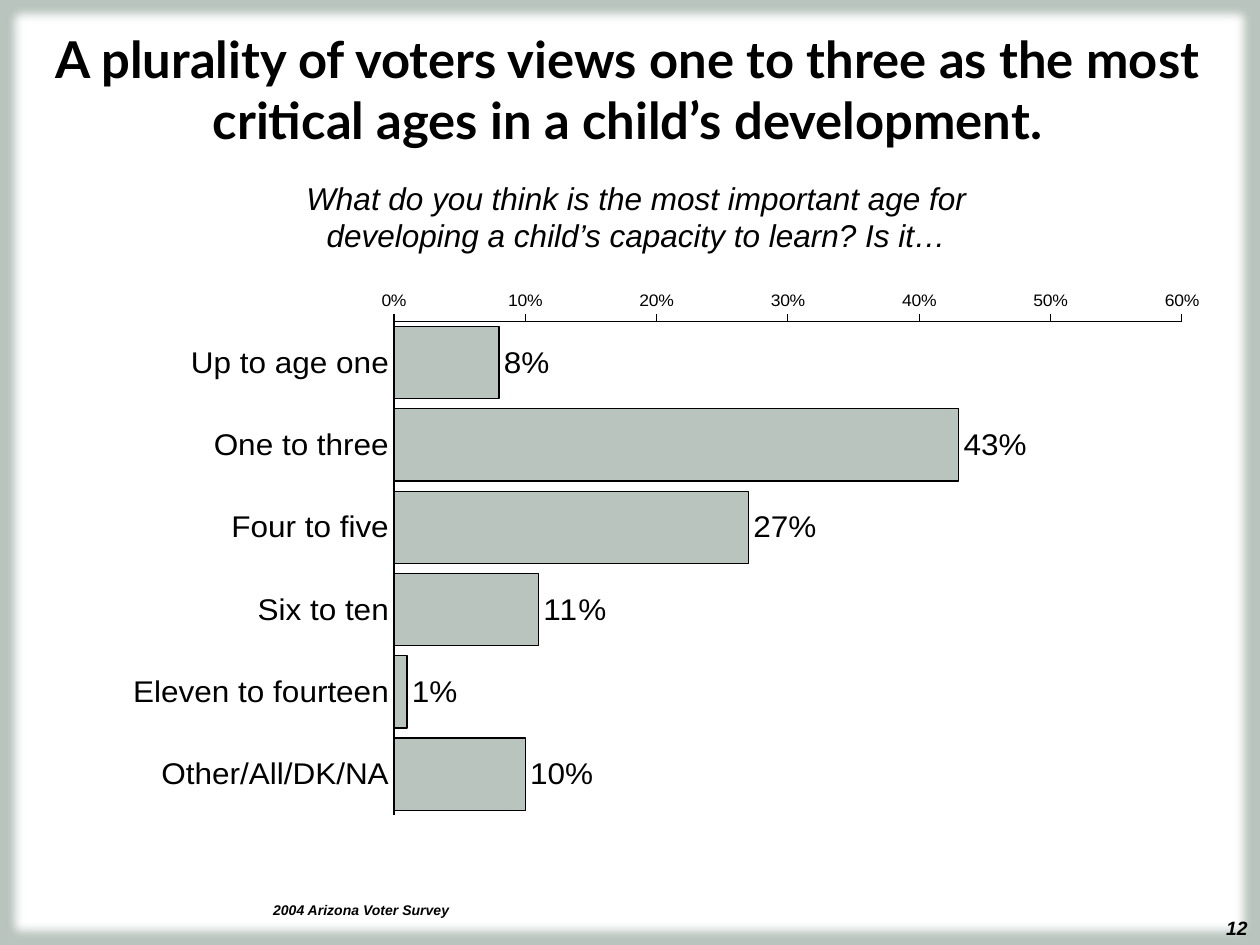
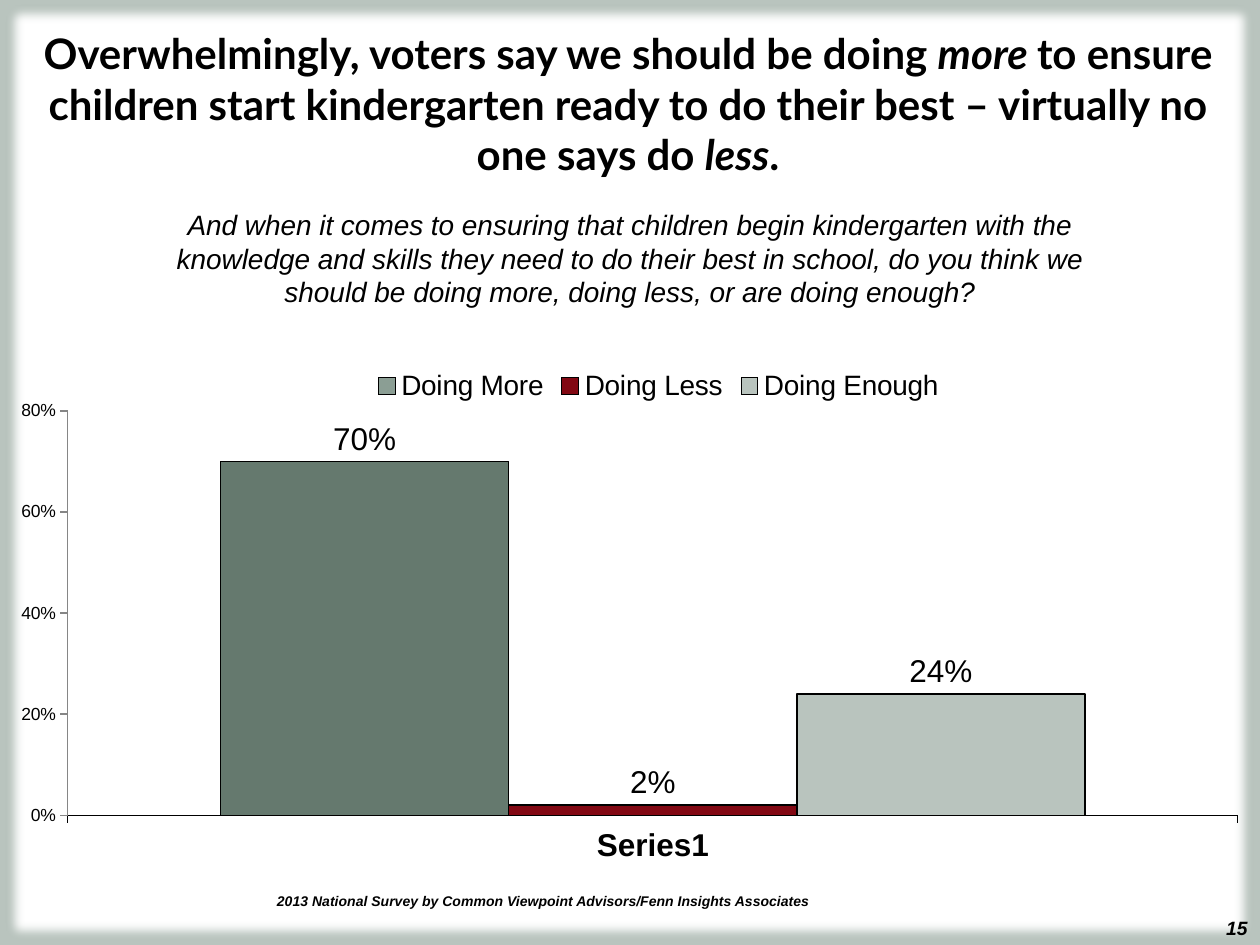
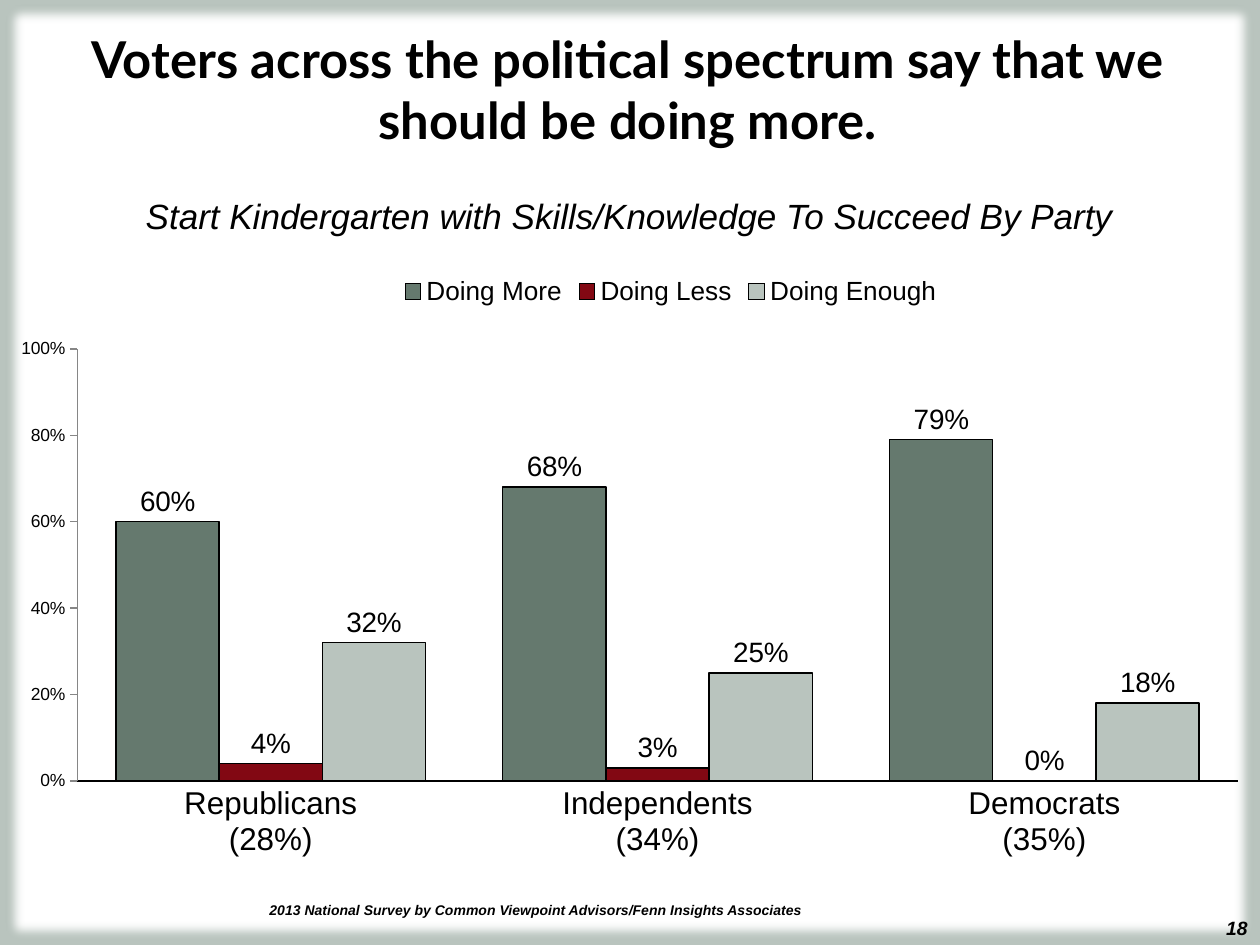
"""Build three voter survey slides, each with one chart."""
import dataclasses

import lxml.etree
import pptx
import pptx.chart.data
import pptx.dml.color
import pptx.enum.chart
import pptx.enum.dml
import pptx.enum.shapes
import pptx.enum.text
import pptx.oxml
import pptx.oxml.ns
import pptx.util

Pt = pptx.util.Pt
Align = pptx.enum.text.PP_ALIGN
Anchor = pptx.enum.text.MSO_ANCHOR
ChartType = pptx.enum.chart.XL_CHART_TYPE
TickMark = pptx.enum.chart.XL_TICK_MARK


@dataclasses.dataclass(frozen=True)
class Theme:
    """Colours, fonts and type sizes shared by the slides."""
    sage: str = "B9C4BE"
    pale_green: str = "8B9E94"
    green: str = "65796E"
    red: str = "820813"
    frame_line: str = "4C5B53"
    axis_grey: str = "868686"
    white: str = "FFFFFF"
    black: str = "000000"
    title_font: str = "Lato"
    body_font: str = "Arial"
    title_size: int = 29
    chart_size: int = 18
    axis_size: int = 10
    number_size: int = 11
    source_size: int = 8


THEME = Theme()
TITLE_BOX = (12.2, 12.2, 693.4, 90)
NUMBER_BOX = (628.6, 519.8, 91.4, 20.2)
FRAME_BOX = (2.9, 2.2, 714.2, 536.4)
NATIONAL_SOURCE = "2013 National Survey by Common Viewpoint Advisors/Fenn Insights Associates"


def color(value):
    """Turn a hexadecimal string into a colour."""
    return pptx.dml.color.RGBColor.from_string(value)


def place(shape, box):
    """Move a shape to a box given in points."""
    shape.left, shape.top, shape.width, shape.height = map(Pt, box)


def format_font(font, size, bold=False, italic=False, name=THEME.body_font):
    """Apply the black text style to a font."""
    font.size, font.bold, font.italic, font.name = Pt(size), bold, italic, name
    font.color.rgb = color(THEME.black)


def write_text(shape, runs, size, bold=False, italic=False, name=THEME.body_font,
               align=Align.CENTER, anchor=Anchor.TOP):
    """Write a string, or (text, italic) runs, as one paragraph."""
    frame = shape.text_frame
    frame.word_wrap = True
    frame.auto_size = pptx.enum.text.MSO_AUTO_SIZE.NONE
    frame.vertical_anchor = anchor
    paragraph = frame.paragraphs[0]
    paragraph.alignment = align
    for text, run_italic in [(runs, italic)] if isinstance(runs, str) else runs:
        run = paragraph.add_run()
        run.text = text
        format_font(run.font, size, bold, run_italic, name)


def add_text(slide, box, text, size, **style):
    """Add a text box with one paragraph."""
    write_text(slide.shapes.add_textbox(*map(Pt, box)), text, size, **style)


def add_source(slide, left, top, text):
    """Add the survey credit near the foot of the slide."""
    add_text(slide, (left, top, 542.2, 34.6), text, THEME.source_size,
             bold=True, italic=True, align=Align.LEFT, anchor=Anchor.MIDDLE)


def add_frame(master, slide):
    """Give the master its background and soft white frame."""
    master.background.fill.solid()
    master.background.fill.fore_color.rgb = color(THEME.sage)
    frame = slide.shapes.add_shape(pptx.enum.shapes.MSO_SHAPE.RECTANGLE, *map(Pt, FRAME_BOX))
    frame.shadow.inherit = False
    frame.fill.solid()
    frame.fill.fore_color.rgb = color(THEME.white)
    frame.line.color.rgb = color(THEME.frame_line)
    frame.line.width = Pt(1.5)
    effects = frame._element.spPr.find(pptx.oxml.ns.qn("a:effectLst"))
    lxml.etree.SubElement(effects, pptx.oxml.ns.qn("a:softEdge"), rad=str(Pt(5)))
    master.shapes._spTree.insert(2, frame._element)


def add_survey_slide(presentation, title, number, size=THEME.title_size):
    """Add a slide with its title and number."""
    slide = presentation.slides.add_slide(presentation.slide_layouts[5])
    place(slide.shapes.title, TITLE_BOX)
    write_text(slide.shapes.title, title, size, bold=True, name=THEME.title_font)
    add_text(slide, NUMBER_BOX, number, THEME.number_size, bold=True, italic=True,
             align=Align.RIGHT)
    return slide


def set_layout(element, index, **fractions):
    """Fix the place of a chart part as fractions of the chart."""
    for layout in element.findall(pptx.oxml.ns.qn("c:layout")):
        element.remove(layout)
    layout = lxml.etree.Element(pptx.oxml.ns.qn("c:layout"))
    manual = lxml.etree.SubElement(layout, pptx.oxml.ns.qn("c:manualLayout"))
    settings = {"xMode": "edge", "yMode": "edge", **fractions}
    if "w" in fractions:
        settings = {"layoutTarget": "inner", **settings}
    for tag, value in settings.items():
        lxml.etree.SubElement(manual, pptx.oxml.ns.qn(f"c:{tag}"), val=str(value))
    element.insert(index, layout)


def format_line(line, value=THEME.black):
    """Draw a thin line in one colour."""
    line.color.rgb = color(value)
    line.width = Pt(0.75)


def format_axes(chart, maximum, step, category_tick, category_bold, value_line):
    """Set scales, ticks, lines and labels of both axes."""
    category, value = chart.category_axis, chart.value_axis
    for axis, tick, size, bold, line in (
            (category, category_tick, THEME.chart_size, category_bold, THEME.black),
            (value, TickMark.OUTSIDE, THEME.axis_size, False, value_line)):
        axis.has_major_gridlines = False
        axis.major_tick_mark = tick
        axis.minor_tick_mark = TickMark.NONE
        format_font(axis.tick_labels.font, size, bold)
        format_line(axis.format.line, line)
    value.minimum_scale, value.maximum_scale, value.major_unit = 0, maximum, step
    value.tick_labels.number_format = "0%"
    value.tick_labels.number_format_is_linked = False


def format_series(series, fill, label_size):
    """Colour a series and show its values."""
    series.invert_if_negative = False
    series.format.fill.solid()
    series.format.fill.fore_color.rgb = color(fill)
    format_line(series.format.line)
    labels = series.data_labels
    labels.show_value = True
    labels.number_format = "0%"
    labels.number_format_is_linked = False
    labels.position = pptx.enum.chart.XL_LABEL_POSITION.OUTSIDE_END
    format_font(labels.font, label_size)


def add_legend(chart, box, left, top, size):
    """Add a legend at an offset inside the chart box."""
    chart.has_legend = True
    legend = chart.legend
    legend.position = pptx.enum.chart.XL_LEGEND_POSITION.TOP
    legend.include_in_layout = False
    format_font(legend.font, size)
    set_layout(legend._element, 1, x=left / box[2], y=top / box[3])


def add_survey_chart(slide, box, plot_box, kind, categories, series, gap, maximum, step,
                     label_size=THEME.chart_size, category_tick=TickMark.NONE,
                     category_bold=False, value_line=THEME.axis_grey):
    """Add a bar chart whose plot box is relative to its own box."""
    data = pptx.chart.data.CategoryChartData(number_format="0%")
    data.categories = categories
    for name, values, _ in series:
        data.add_series(name, values)
    chart = slide.shapes.add_chart(kind, *map(Pt, box), data).chart
    chart.has_title = False
    chart.has_legend = False
    format_font(chart.font, THEME.chart_size)
    plot = chart.plots[0]
    plot.gap_width = gap
    plot.vary_by_categories = False
    format_axes(chart, maximum, step, category_tick, category_bold, value_line)
    for drawn, (_, _, fill) in zip(plot.series, series):
        format_series(drawn, fill, label_size)
    left, top, width, height = plot_box
    set_layout(chart._chartSpace.chart.plotArea, 0, x=left / box[2], y=top / box[3],
               w=width / box[2], h=height / box[3])
    return chart


def build_ages_slide(presentation):
    """Build the slide on the most critical ages."""
    slide = add_survey_slide(
        presentation,
        "A plurality of voters views one to three as the most critical ages "
        "in a child’s development.", "12")
    add_text(slide, (132.5, 98.5, 462.2, 50.4),
             "What do you think is the most important age for developing "
             "a child’s capacity to learn? Is it…", 18, italic=True)
    categories = ("Up to age one", "One to three", "Four to five", "Six to ten",
                  "Eleven to fourteen", "Other/All/DK/NA")
    values = (0.08, 0.43, 0.27, 0.11, 0.01, 0.1)
    chart = add_survey_chart(
        slide, (23, 166.3, 662.4, 316.8), (202.1, 1.7, 450.3, 297.1),
        ChartType.BAR_CLUSTERED, categories, [("Series 1", values, THEME.sage)],
        gap=14, maximum=0.6, step=0.1, value_line=THEME.black)
    chart.category_axis.reverse_order = True
    chart.category_axis.crosses = pptx.enum.chart.XL_AXIS_CROSSES.MAXIMUM
    add_source(slide, 149, 502.6, "2004 Arizona Voter Survey")
    return slide


def build_more_slide(presentation):
    """Build the slide on doing more, less or enough."""
    title = [("Overwhelmingly, voters say we should be doing ", False), ("more ", True),
             ("to ensure children start kindergarten ready to do their best – "
              "virtually no one says do ", False), ("less", True), (".", False)]
    slide = add_survey_slide(presentation, title, "15", size=24)
    add_text(slide, (78.5, 115.2, 563, 65.5),
             "And when it comes to ensuring that children begin kindergarten with the "
             "knowledge and skills they need to do their best in school, do you think we "
             "should be doing more, doing less, or are doing enough?", 16, italic=True)
    box = (12.2, 201.6, 696.2, 291.6)
    chart = add_survey_chart(
        slide, box, (25.5, 33.3, 669.7, 231.4), ChartType.COLUMN_CLUSTERED, ["Series1"],
        [("Doing More", [0.7], THEME.pale_green), ("Doing Less", [0.02], THEME.red),
         ("Doing Enough", [0.24], THEME.sage)],
        gap=106, maximum=0.8, step=0.2, category_tick=TickMark.OUTSIDE, category_bold=True)
    more_bar = chart.plots[0].series[0].points[0].format
    more_bar.fill.solid()
    more_bar.fill.fore_color.rgb = color(THEME.green)
    format_line(more_bar.line)
    add_legend(chart, box, left=198, top=7, size=16)
    add_source(slide, 151.2, 497.5, NATIONAL_SOURCE)


def build_party_slide(presentation):
    """Build the slide on answers by party."""
    slide = add_survey_slide(
        presentation,
        "Voters across the political spectrum say that we should be doing more.", "18")
    box = (12.2, 149, 696.2, 355)
    chart = add_survey_chart(
        slide, box, (30.1, 50.4, 665.1, 246.9), ChartType.COLUMN_CLUSTERED,
        ["Republicans\n(28%)", "Independents\n(34%)", "Democrats\n(35%)"],
        [("Doing More", (0.6, 0.68, 0.79), THEME.green),
         ("Doing Less", (0.04, 0.03, 0), THEME.red),
         ("Doing Enough", (0.32, 0.25, 0.18), THEME.sage)],
        gap=75, maximum=1, step=0.2, label_size=16)
    add_legend(chart, box, left=213, top=6.4, size=15)
    add_text(slide, (2.2, 107.3, 715, 31.7),
             "Start Kindergarten with Skills/Knowledge To Succeed By Party", 20,
             italic=True, anchor=Anchor.MIDDLE)
    add_source(slide, 146.9, 502.6, NATIONAL_SOURCE)


def main():
    """Build and save the presentation."""
    presentation = pptx.Presentation()
    presentation.slide_width, presentation.slide_height = Pt(720), Pt(540)
    first_slide = build_ages_slide(presentation)
    add_frame(presentation.slide_master, first_slide)
    build_more_slide(presentation)
    build_party_slide(presentation)
    presentation.save("out.pptx")


if __name__ == "__main__":
    main()
